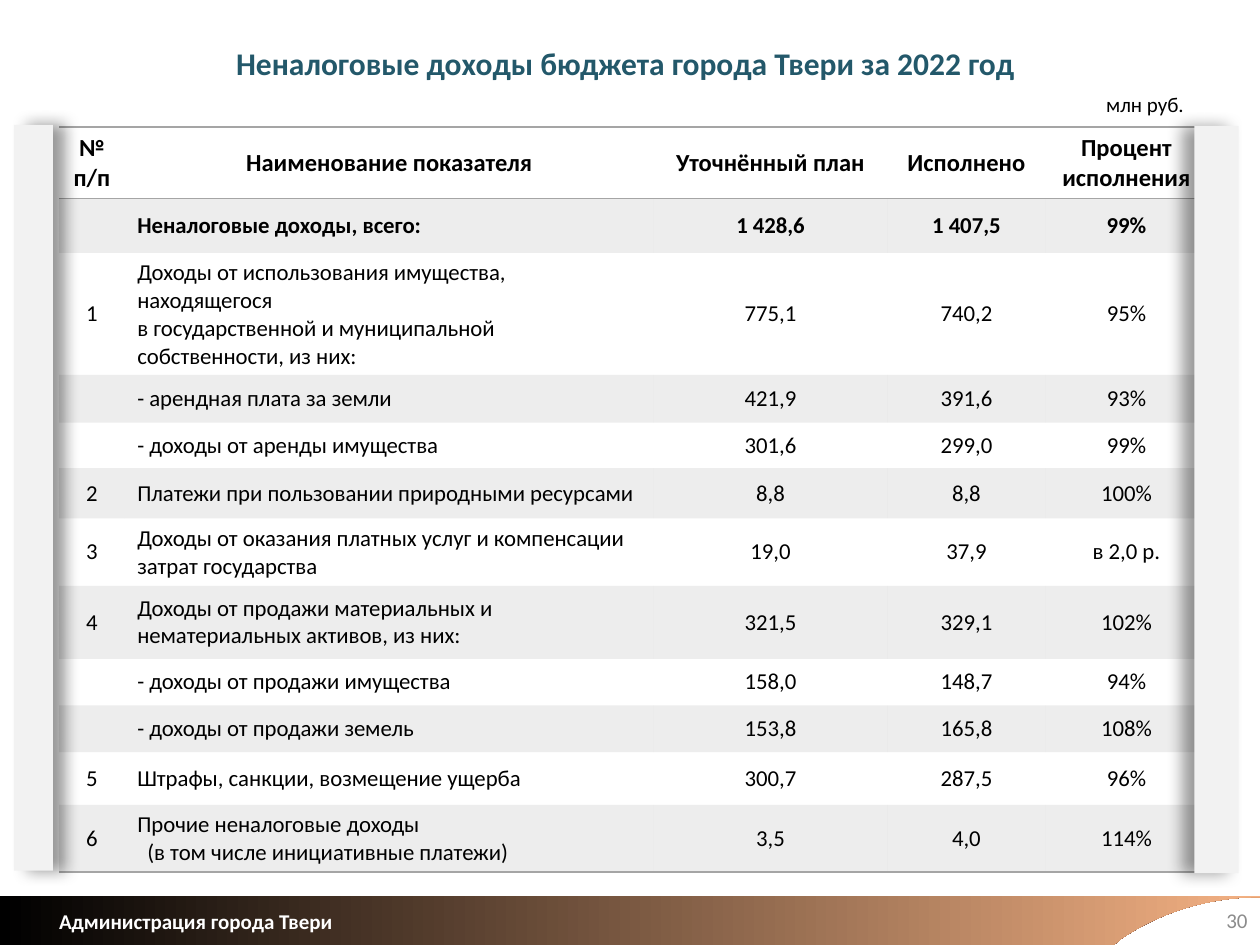
from lxml.etree import SubElement
from pptx import Presentation
from pptx.dml.color import RGBColor
from pptx.enum.shapes import MSO_SHAPE
from pptx.enum.text import MSO_ANCHOR, PP_ALIGN
from pptx.oxml import parse_xml
from pptx.oxml.ns import nsdecls, qn
from pptx.util import Inches, Pt

COLUMNS = [0.52, 4.2, 1.85, 1.26, 1.28]
ROW_HEIGHTS = [0.55, 0.43, 0.9, 0.38, 0.36, 0.4, 0.53, 0.58, 0.37, 0.37, 0.42, 0.44]
ROWS = [
    ("№ п/п", "Наименование показателя", "Уточнённый план", "Исполнено", "Процент исполнения"),
    ("", "Неналоговые доходы, всего:", "1 428,6", "1 407,5", "99%"),
    ("1", "Доходы от использования имущества, находящегося\n"
          "в государственной и муниципальной собственности, из них:", "775,1", "740,2", "95%"),
    ("", "- арендная плата за земли", "421,9", "391,6", "93%"),
    ("", "- доходы от аренды имущества", "301,6", "299,0", "99%"),
    ("2", "Платежи при пользовании природными ресурсами", "8,8", "8,8", "100%"),
    ("3", "Доходы от оказания платных услуг и компенсации затрат государства",
     "19,0", "37,9", "в 2,0 р."),
    ("4", "Доходы от продажи материальных и нематериальных активов, из них:",
     "321,5", "329,1", "102%"),
    ("", "- доходы от продажи имущества", "158,0", "148,7", "94%"),
    ("", "- доходы от продажи земель", "153,8", "165,8", "108%"),
    ("5", "Штрафы, санкции, возмещение ущерба", "300,7", "287,5", "96%"),
    ("6", "Прочие неналоговые доходы\n(в том числе инициативные платежи)", "3,5", "4,0", "114%"),
]
PLAIN_TABLE = "{2D5ABB26-0587-4C30-8999-92F81FD0307C}"


def rgb(value):
    return RGBColor.from_string(value)


def curve(p0, p1, p2, p3, steps=24):
    """Points along a cubic Bezier curve, without its start."""
    for i in range(1, steps + 1):
        t = i / steps
        u = 1 - t
        yield tuple(u**3 * a + 3 * u * u * t * b + 3 * u * t * t * c + t**3 * d
                    for a, b, c, d in zip(p0, p1, p2, p3))


class SlideBuilder:
    font = "Calibri"
    rule = "A5A5A5"

    def __init__(self, slide):
        self.s = slide

    def fill_text(self, tf, text, color="000000", align=PP_ALIGN.LEFT, **fmt):
        for i, line in enumerate(text.split("\n")):
            p = tf.paragraphs[0] if i == 0 else tf.add_paragraph()
            p.alignment = align
            if not line:
                SubElement(p._p, qn("a:endParaRPr")).set("sz", str(int(fmt["size"].pt * 100)))
                continue
            r = p.add_run()
            r.text = line
            r.font.color.rgb = rgb(color)
            for name, value in {"name": self.font, **fmt}.items():
                setattr(r.font, name, value)

    def text(self, box, text, size, wrap=True, anchor=MSO_ANCHOR.TOP, **fmt):
        tf = self.s.shapes.add_textbox(*map(Inches, box)).text_frame
        tf.word_wrap = wrap
        tf.vertical_anchor = anchor
        self.fill_text(tf, text, size=Pt(size), **fmt)

    def table(self, left, top):
        shape = self.s.shapes.add_table(len(ROWS), len(COLUMNS), Inches(left), Inches(top),
                                        Inches(sum(COLUMNS)), Inches(sum(ROW_HEIGHTS)))
        table = shape.table
        table.first_row = table.horz_banding = False
        table._tbl.tblPr.find(qn("a:tableStyleId")).text = PLAIN_TABLE
        for column, width in zip(table.columns, COLUMNS):
            column.width = Inches(width)
        for i, (row, height) in enumerate(zip(table.rows, ROW_HEIGHTS)):
            row.height = Inches(height)
            for j, cell in enumerate(row.cells):
                self.cell(cell, i, j)
        last_name = table.cell(len(ROWS) - 1, 1).text_frame.paragraphs[1]
        last_name._p.get_or_add_pPr().set("marL", str(Inches(0.08)))

    def cell(self, cell, i, j):
        cell.vertical_anchor = MSO_ANCHOR.MIDDLE
        left = j == 1 and i > 0
        self.fill_text(cell.text_frame, ROWS[i][j], size=Pt(13 if i else 14), bold=i < 2,
                       align=PP_ALIGN.LEFT if left else PP_ALIGN.CENTER)
        if i % 2:
            cell.fill.solid()
            cell.fill.fore_color.rgb = rgb(self.rule)
            tint = cell._tc.tcPr.find(".//" + qn("a:srgbClr"))
            SubElement(tint, qn("a:alpha")).set("val", "20000")
        else:
            cell.fill.background()
        if i in (0, len(ROWS) - 1):
            self.border(cell, "lnB")
        if i == 0:
            self.border(cell, "lnT")

    def border(self, cell, side):
        cell._tc.get_or_add_tcPr().insert(0, parse_xml(
            f'<a:{side} {nsdecls("a")} w="12700"><a:solidFill>'
            f'<a:srgbClr val="{self.rule}"/></a:solidFill></a:{side}>'))

    def side_panel(self, box, angle, align):
        """Grey strip that casts a slightly shorter shadow on the table."""
        sp = self.s.shapes.add_shape(MSO_SHAPE.RECTANGLE, *map(Inches, box))
        sp.fill.solid()
        sp.fill.fore_color.rgb = rgb("F2F2F2")
        sp.line.fill.background()
        sp._element.spPr.append(parse_xml(
            f'<a:effectLst {nsdecls("a")}><a:outerShdw blurRad="{Pt(9)}" dist="{Pt(7)}" '
            f'dir="{angle * 60000}" sy="96000" algn="{align}" rotWithShape="0">'
            '<a:srgbClr val="000000"><a:alpha val="40000"/></a:srgbClr>'
            '</a:outerShdw></a:effectLst>'))

    def footer_band(self):
        points = [(10, 7.11), (10, 7.12),
                  *curve((10, 7.12), (9.59, 7.12), (9.21, 7.24), (8.9, 7.45)),
                  (8.84, 7.5), (0, 7.5)]
        builder = self.s.shapes.build_freeform(0, Inches(7.11), scale=1.0)
        builder.add_line_segments([(Inches(x), Inches(y)) for x, y in points], close=True)
        sp = builder.convert_to_shape()
        sp.shadow.inherit = False
        sp.line.fill.background()
        sp.fill.gradient()
        sp.fill.gradient_angle = 0
        for stop, color, position in zip(sp.fill.gradient_stops, ("000000", "F4B183"), (0, 1)):
            stop.color.rgb = rgb(color)
            stop.position = position


def main():
    prs = Presentation()
    prs.slide_width, prs.slide_height = Inches(10), Inches(7.5)
    b = SlideBuilder(prs.slides.add_slide(prs.slide_layouts[6]))
    b.text((0.45, 0.17, 9.03, 0.65), "Неналоговые доходы бюджета города Твери за 2022 год", 18,
           color="23586A", bold=True, align=PP_ALIGN.CENTER, anchor=MSO_ANCHOR.MIDDLE)
    b.table(0.47, 1.01)
    b.side_panel((9.48, 1, 0.35, 5.93), 180, "r")
    b.side_panel((0.11, 0.99, 0.31, 5.92), 0, "l")
    b.text((8.68, 0.68, 0.82, 0.3), "млн руб.", 12, wrap=False)
    b.footer_band()
    b.text((0.37, 7.16, 2.39, 0.3), "Администрация города Твери", 12, wrap=False,
           color="FFFFFF", bold=True)
    b.text((7.75, 7.1, 2.25, 0.4), "30", 12, color="8C8C8C", align=PP_ALIGN.RIGHT,
           anchor=MSO_ANCHOR.MIDDLE)
    prs.save("out.pptx")


if __name__ == "__main__":
    main()
